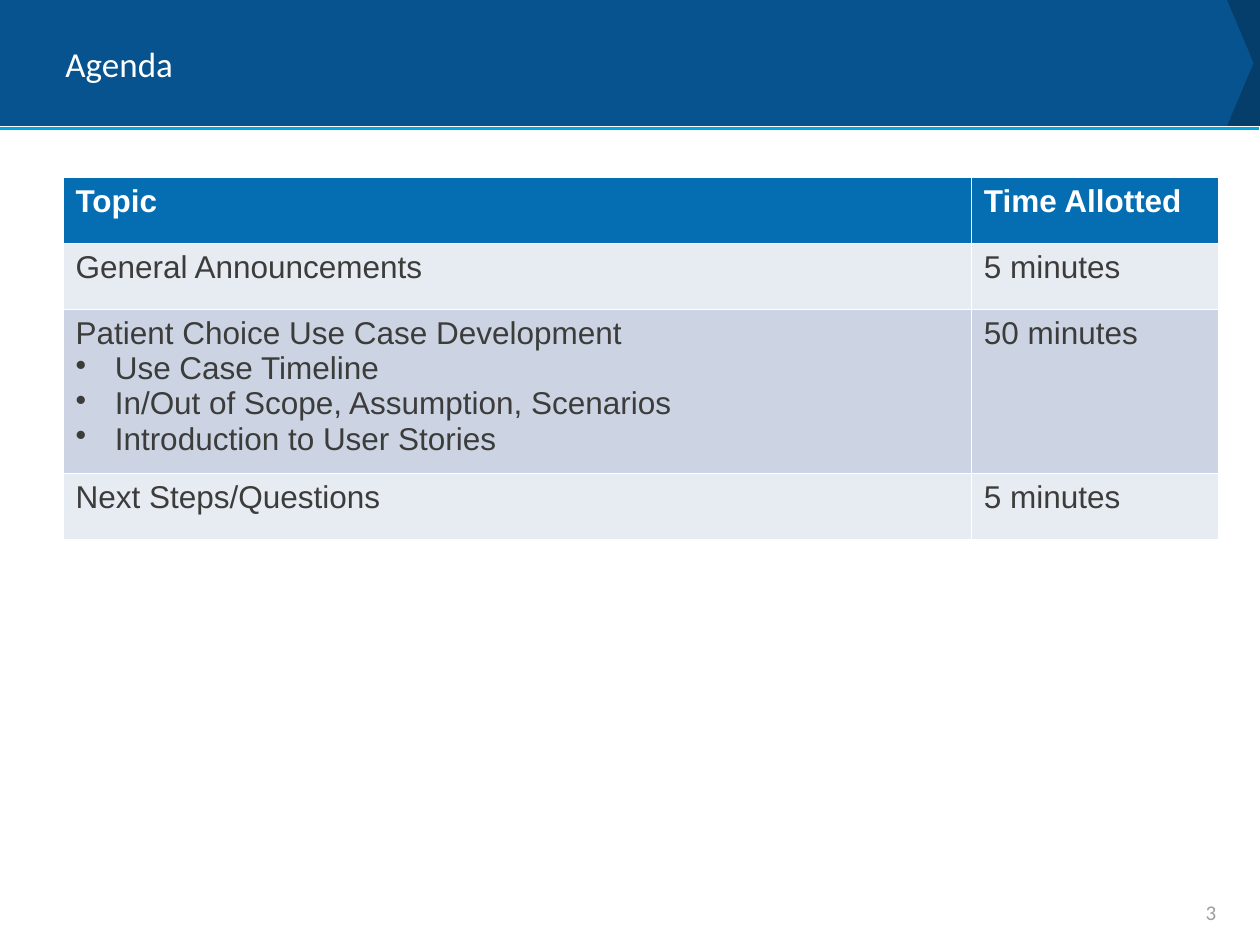
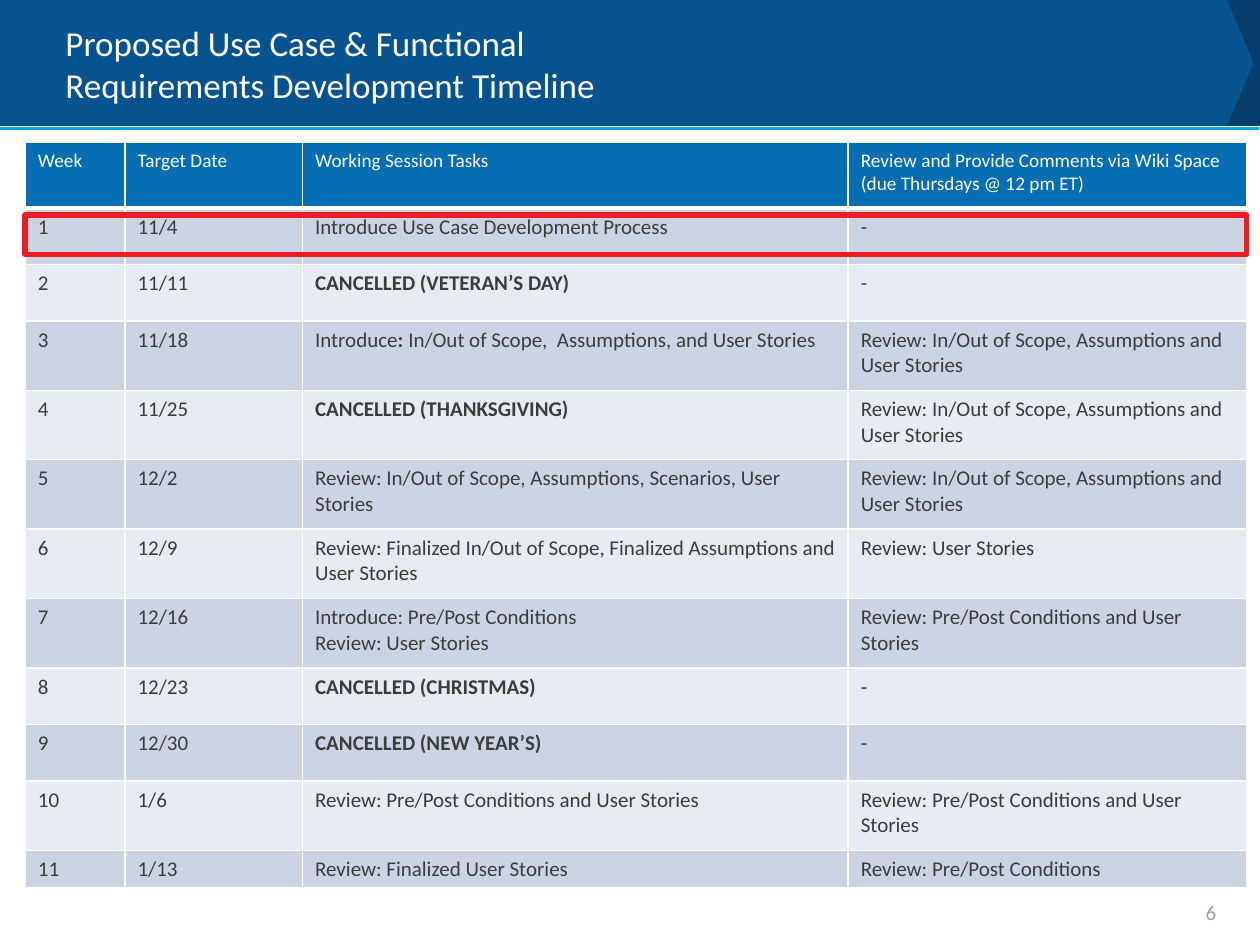
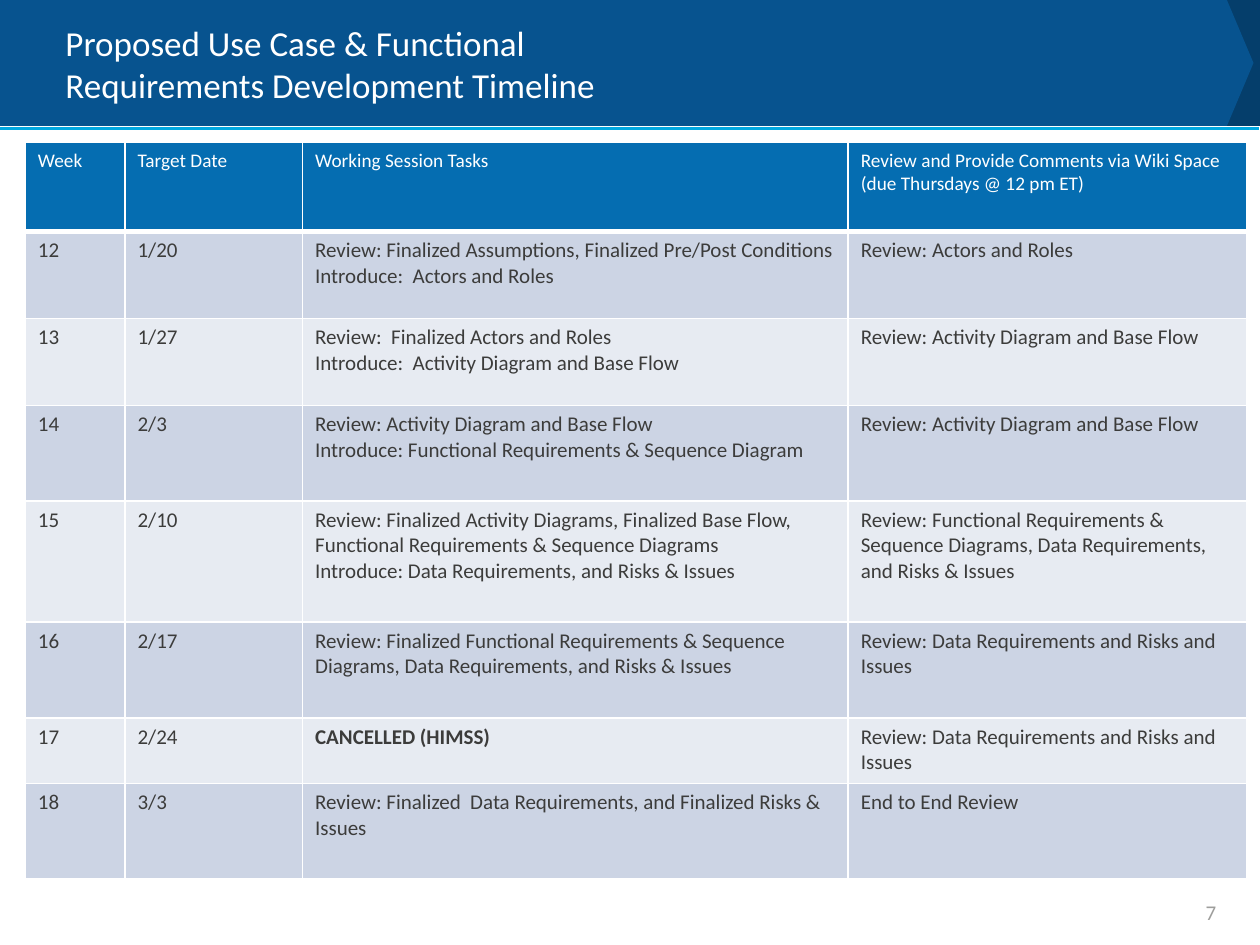
from itertools import cycle

from lxml.etree import SubElement
from pptx import Presentation
from pptx.dml.color import RGBColor
from pptx.enum.shapes import MSO_CONNECTOR, MSO_SHAPE
from pptx.enum.text import MSO_ANCHOR, PP_ALIGN
from pptx.oxml import parse_xml
from pptx.oxml.ns import nsdecls, qn
from pptx.util import Cm, Pt

COLORS = {
    "white": "FFFFFF", "band": "07538F", "band_end": "053E6B", "rule": "00A8E1",
    "header": "056DB1", "pale": "E7EBF2", "mid": "CCD4E4",
    "body": "3C3C3B", "number": "9E9E9C", "highlight": "ED1C24",
}
TIMELINE_TITLE = "Proposed Use Case & Functional\vRequirements Development Timeline"
TIMELINE_HEADER = ["Week", "Target Date", "Working Session Tasks",
                   "Review and Provide Comments via Wiki Space (due Thursdays @ 12 pm ET)"]
TIMELINE_COLUMNS = [2.01, 3.58, 11, 8.03]
TIMELINE_LEFT, TIMELINE_TOP = 0.51, 2.87

# In cell text, "\n" starts a paragraph, "• " a bullet, and "**" encloses bold words.
AGENDA = [
    ["**Topic**", "**Time Allotted**"],
    ["General Announcements", "5 minutes"],
    ["Patient Choice Use Case Development\n• Use Case Timeline\n"
     "• In/Out of Scope, Assumption, Scenarios\n• Introduction to User Stories", "50 minutes"],
    ["Next Steps/Questions", "5 minutes"],
]
SCOPE_REVIEW = "Review: In/Out of Scope, Assumptions and User Stories"
CONDITIONS_REVIEW = "Review: Pre/Post Conditions and User Stories"
FLOW_REVIEW = "Review: Activity Diagram and Base Flow"
RISKS_REVIEW = "Review: Data Requirements and Risks and Issues"
FIRST_WEEKS = [
    TIMELINE_HEADER,
    ["1", "11/4", "Introduce Use Case Development Process", "-"],
    ["2", "11/11", "**CANCELLED (VETERAN’S DAY)**", "-"],
    ["3", "11/18", "Introduce**: **In/Out of Scope,  Assumptions, and User Stories", SCOPE_REVIEW],
    ["4", "11/25", "**CANCELLED (THANKSGIVING)**", SCOPE_REVIEW],
    ["5", "12/2", "Review: In/Out of Scope, Assumptions, Scenarios, User Stories", SCOPE_REVIEW],
    ["6", "12/9", "Review: Finalized In/Out of Scope, Finalized Assumptions and User Stories",
     "Review: User Stories"],
    ["7", "12/16", "Introduce: Pre/Post Conditions\nReview: User Stories", CONDITIONS_REVIEW],
    ["8", "12/23", "**CANCELLED (CHRISTMAS)**", "-"],
    ["9", "12/30", "**CANCELLED (NEW YEAR’S)**", "-"],
    ["10", "1/6", CONDITIONS_REVIEW, CONDITIONS_REVIEW],
    ["11", "1/13", "Review: Finalized User Stories", "Review: Pre/Post Conditions"],
]
LAST_WEEKS = [
    TIMELINE_HEADER,
    ["12", "1/20", "Review: Finalized Assumptions, Finalized Pre/Post Conditions\n"
     "Introduce:  Actors and Roles", "Review: Actors and Roles"],
    ["13", "1/27", "Review:  Finalized Actors and Roles\n"
     "Introduce:  Activity Diagram and Base Flow", FLOW_REVIEW],
    ["14", "2/3", FLOW_REVIEW + "\nIntroduce: Functional Requirements & Sequence Diagram",
     FLOW_REVIEW],
    ["15", "2/10", "Review: Finalized Activity Diagrams, Finalized Base Flow, "
     "Functional Requirements & Sequence Diagrams\n"
     "Introduce: Data Requirements, and Risks & Issues",
     "Review: Functional Requirements & Sequence Diagrams, Data Requirements, and Risks & Issues"],
    ["16", "2/17", "Review: Finalized Functional Requirements & Sequence Diagrams, "
     "Data Requirements, and Risks & Issues", RISKS_REVIEW],
    ["17", "2/24", "**CANCELLED (HIMSS)**", RISKS_REVIEW],
    ["18", "3/3", "Review: Finalized  Data Requirements, and Finalized Risks & Issues",
     "End to End Review"],
]


def rgb(name):
    return RGBColor.from_string(COLORS[name])


class Deck:
    def __init__(self):
        self.presentation = Presentation()
        self.presentation.slide_width = Cm(25.4)
        self.presentation.slide_height = Cm(19.05)
        self.slide = None

    def start_slide(self, title, number):
        self.slide = self.presentation.slides.add_slide(self.presentation.slide_layouts[6])
        self.band(24.26, 1.14, "band_end", 0)
        self.band(0, 25.27, "band", 0.211)
        self.rule(2.59)
        self.label(title, 1.07, 0.2, 23.29, 2.16, 20, "white")
        self.label(number, 18.85, 18.06, 5.92, 0.64, 12, "number", PP_ALIGN.RIGHT)

    def band(self, left, width, color, point):
        arrow = self.slide.shapes.add_shape(MSO_SHAPE.PENTAGON, Cm(left), 0, Cm(width), Cm(2.54))
        arrow.adjustments[0] = point
        arrow.shadow.inherit = False
        arrow.fill.solid()
        arrow.fill.fore_color.rgb = rgb(color)
        arrow.line.fill.background()

    def rule(self, top):
        line = self.slide.shapes.add_connector(
            MSO_CONNECTOR.STRAIGHT, 0, Cm(top), Cm(25.37), Cm(top))
        line.line.color.rgb = rgb("rule")
        line.line.width = Pt(2.25)
        SubElement(line._element.spPr, qn("a:effectLst"))

    def label(self, text, left, top, width, height, size, color, align=PP_ALIGN.LEFT):
        frame = self.slide.shapes.add_textbox(
            Cm(left), Cm(top), Cm(width), Cm(height)).text_frame
        frame.word_wrap = True
        frame.vertical_anchor = MSO_ANCHOR.MIDDLE
        frame.text = text
        paragraph = frame.paragraphs[0]
        paragraph.alignment = align
        self.style(paragraph, size, color, "Calibri")

    def style(self, paragraph, size, color, typeface, bold=False):
        font = paragraph.font
        font.size, font.name, font.bold = Pt(size), typeface, bold
        font.color.rgb = rgb(color)

    def table(self, rows, left, top, widths, heights, stripes, typeface,
              header_size, body_size, header_rule=1):
        table = self.slide.shapes.add_table(
            len(rows), len(widths), Cm(left), Cm(top), Cm(sum(widths)), Cm(sum(heights))).table
        table.first_row = table.horz_banding = False
        for column, width in zip(table.columns, widths):
            column.width = Cm(width)
        stripe = cycle(stripes)
        for index, (row, height, texts) in enumerate(zip(table.rows, heights, rows)):
            row.height = Cm(height)
            if index == 0:
                fill, size, color, bottom = "header", header_size, "white", header_rule
            else:
                fill, size, color, bottom = next(stripe), body_size, "body", 1
            for cell, text in zip(row.cells, texts):
                cell.fill.solid()
                cell.fill.fore_color.rgb = rgb(fill)
                self.cell_borders(cell, bottom)
                self.cell_text(cell, text, size, color, typeface)

    def cell_borders(self, cell, bottom):
        properties = cell._tc.get_or_add_tcPr()
        for position, (side, width) in enumerate(zip("LRTB", (1, 1, 1, bottom))):
            properties.insert(position, parse_xml(
                f'<a:ln{side} {nsdecls("a")} w="{Pt(width)}"><a:solidFill>'
                f'<a:srgbClr val="{COLORS["white"]}"/></a:solidFill></a:ln{side}>'))

    def cell_text(self, cell, text, size, color, typeface):
        frame = cell.text_frame
        for index, line in enumerate(text.split("\n")):
            paragraph = frame.add_paragraph() if index else frame.paragraphs[0]
            if line.startswith("• "):
                line = line[2:]
                self.bullet(paragraph)
            # Every second part of the split stands between bold marks.
            parts = [(part, place % 2 == 1)
                     for place, part in enumerate(line.split("**")) if part]
            all_bold = all(bold for _, bold in parts)
            self.style(paragraph, size, color, typeface, all_bold)
            for part, bold in parts:
                run = paragraph.add_run()
                run.text = part
                if bold != all_bold:
                    run.font.bold = bold

    def bullet(self, paragraph):
        properties = paragraph._p.get_or_add_pPr()
        properties.set("marL", str(Cm(0.79)))
        properties.set("indent", str(-Cm(0.79)))
        SubElement(properties, qn("a:buChar")).set("char", "•")

    def timeline(self, number, rows, heights):
        self.start_slide(TIMELINE_TITLE, number)
        self.table(rows, TIMELINE_LEFT, TIMELINE_TOP, TIMELINE_COLUMNS, heights,
                   ("mid", "pale"), "Calibri", 11, 12, header_rule=3)

    def highlight(self, left, top, width, height):
        frame = self.slide.shapes.add_shape(
            MSO_SHAPE.RECTANGLE, Cm(left), Cm(top), Cm(width), Cm(height))
        frame.shadow.inherit = False
        frame.fill.background()
        frame.line.color.rgb = rgb("highlight")
        frame.line.width = Pt(3.25)


def main():
    deck = Deck()
    deck.start_slide("Agenda", "3")
    deck.table(AGENDA, 1.27, 3.58, [18.31, 4.98], [1.33, 1.33, 3.07, 1.33],
               ("pale", "mid"), "Arial", 18, 18)

    one_line, two_lines = 1.14, 1.4
    deck.timeline("6", FIRST_WEEKS, [1.32] + [one_line] * 2 + [two_lines] * 5
                  + [one_line] * 2 + [two_lines, 0.76])
    deck.highlight(TIMELINE_LEFT, 4.34, sum(TIMELINE_COLUMNS), 0.79)

    deck.timeline("7", LAST_WEEKS, [1.8, 1.75, 1.75, 1.93, 2.44, 1.93, 1.32, 1.93])
    deck.presentation.save("out.pptx")


if __name__ == "__main__":
    main()
